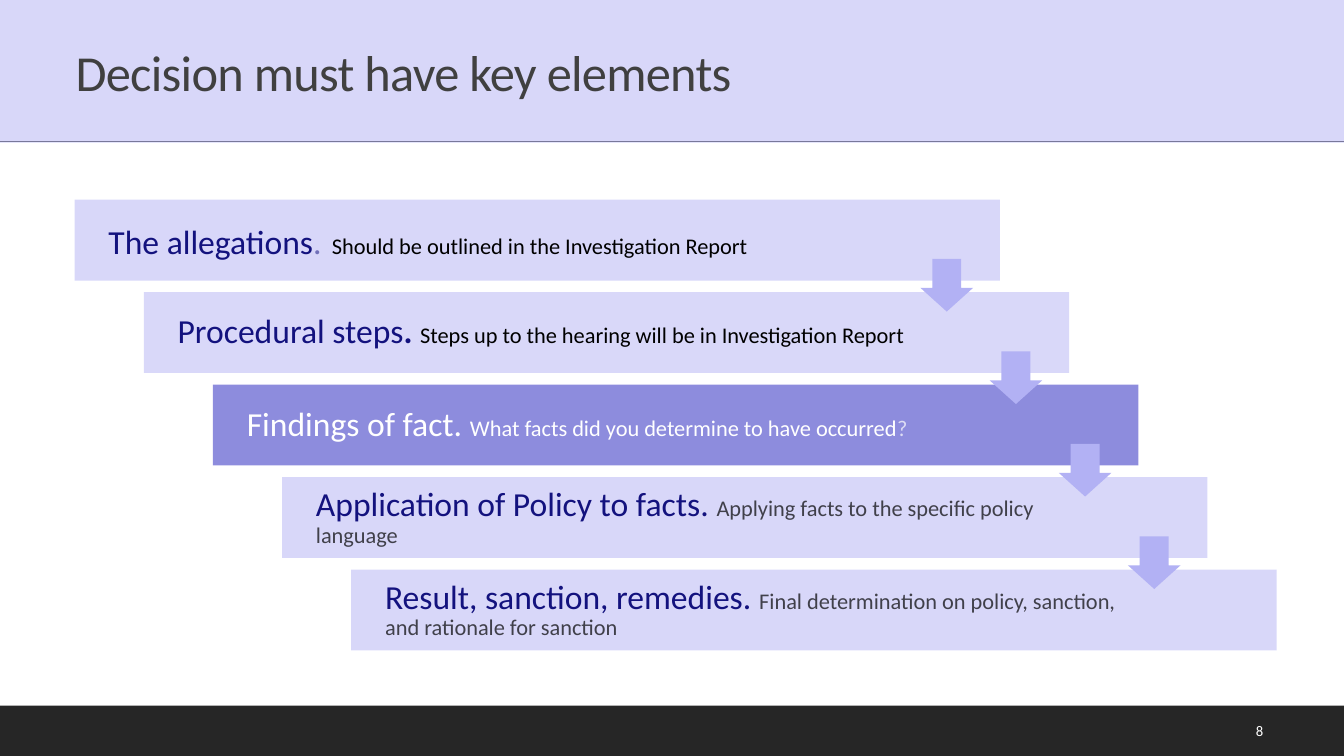
import dataclasses

import lxml.etree
import pptx
import pptx.dml.color
import pptx.enum.shapes
import pptx.enum.text
import pptx.oxml.ns
import pptx.util

Pt = pptx.util.Pt
SHAPES = pptx.enum.shapes.MSO_SHAPE
ALIGN = pptx.enum.text.PP_ALIGN
qn = pptx.oxml.ns.qn


@dataclasses.dataclass(frozen=True)
class Paint:
    colour: str
    opacity: int = 100


@dataclasses.dataclass(frozen=True)
class Theme:
    font = "Calibri"
    white = Paint("FFFFFF")
    black = Paint("000000")
    footer = Paint("262626")
    grey = Paint("404040")
    navy = Paint("13127E")
    violet = Paint("7170B9")
    lilac = Paint("B2B1F4")
    pale = Paint("B2B1F4", 50)
    pale_solid = Paint("D9D8F9")
    strong = Paint("1D1BBD", 50)
    soft_black = Paint("000000", 70)
    soft_white = Paint("FFFFFF", 70)
    title_size = 36
    gap_size = 32
    lead_size = 24
    detail_size = 16
    number_size = 10.5


@dataclasses.dataclass(frozen=True)
class Words:
    text: str
    size: float
    paint: Paint
    bold: bool = False


class SlideBuilder:
    def __init__(self, presentation, theme):
        self.theme = theme
        self.slide = presentation.slides.add_slide(presentation.slide_layouts[5])

    def paint(self, fill, paint):
        fill.solid()
        fill.fore_color.rgb = pptx.dml.color.RGBColor.from_string(paint.colour)
        if paint.opacity < 100:
            colour = fill._xPr.find(qn("a:solidFill"))[0]
            alpha = lxml.etree.SubElement(colour, qn("a:alpha"))
            alpha.set("val", str(paint.opacity * 1000))

    def set_words(self, frame, words, insets, align=ALIGN.LEFT, line_spacing=0.9):
        """Fill a text frame with one paragraph; insets run left, top, right, bottom."""
        frame.word_wrap = True
        frame.auto_size = pptx.enum.text.MSO_AUTO_SIZE.NONE
        frame.vertical_anchor = pptx.enum.text.MSO_ANCHOR.MIDDLE
        (frame.margin_left, frame.margin_top,
         frame.margin_right, frame.margin_bottom) = map(Pt, insets)
        paragraph = frame.paragraphs[0]
        paragraph.alignment = align
        paragraph.line_spacing = line_spacing
        for part in words:
            run = paragraph.add_run()
            run.text = part.text
            run.font.name = self.theme.font
            run.font.size = Pt(part.size)
            run.font.bold = part.bold
            self.paint(run.font.fill, part.paint)
        return paragraph

    def title(self, text, left, top, width, height):
        title = self.slide.shapes.title
        title.left, title.top, title.width, title.height = map(Pt, (left, top, width, height))
        self.paint(title.fill, self.theme.pale)
        words = [Words(text, self.theme.title_size, self.theme.grey)]
        paragraph = self.set_words(title.text_frame, words, (54, 8.64, 7.2, 3.6))
        paragraph.runs[0].font._element.set("spc", "-50")
        # The translucent title band lies over the rule below it.
        self.slide.shapes._spTree.append(title._element)

    def shape(self, kind, left, top, width, height, paint, adjustments=()):
        shape = self.slide.shapes.add_shape(kind, *map(Pt, (left, top, width, height)))
        shape.shadow.inherit = False
        shape.line.fill.background()
        self.paint(shape.fill, paint)
        for index, value in enumerate(adjustments):
            shape.adjustments[index] = value

    def rule(self, left, top, right, paint):
        line = self.slide.shapes.add_connector(
            pptx.enum.shapes.MSO_CONNECTOR.STRAIGHT, Pt(left), Pt(top), Pt(right), Pt(top))
        line.line.width = Pt(1)
        self.paint(line.line.fill, paint)
        lxml.etree.SubElement(line._element.spPr, qn("a:effectLst"))

    def text(self, words, left, top, width, height, insets, **style):
        box = self.slide.shapes.add_textbox(*map(Pt, (left, top, width, height)))
        self.set_words(box.text_frame, words, insets, **style)


def build_steps(theme):
    """Return fill, text width and words for each band of the staircase."""
    def lead(text, paint=theme.navy, bold=False):
        return Words(text, theme.lead_size, paint, bold)

    def detail(text, paint=theme.soft_black):
        return Words(text, theme.detail_size, paint)

    return [
        (theme.pale, 592, [
            lead("The allegations"), lead(".", theme.violet),
            Words(" ", theme.gap_size, theme.violet),
            detail("Should be outlined in the Investigation Report", theme.black)]),
        (theme.pale_solid, 571, [
            lead("Procedural steps"), lead(". ", bold=True),
            detail("Steps up to the hearing will be in Investigation Report", theme.black)]),
        (theme.strong, 571, [
            lead("Findings of fact. ", theme.white),
            detail("What facts did you determine to have occurred", theme.white),
            detail("?", theme.soft_white)]),
        (theme.pale, 571, [
            lead("Application of Policy to facts. "),
            detail("Applying facts to the specific policy language")]),
        (theme.pale, 571, [
            lead("Result, sanction, remedies. "),
            detail("Final determination on policy, sanction, and rationale for sanction")]),
    ]


def main():
    presentation = pptx.Presentation()
    presentation.slide_width, presentation.slide_height = Pt(960), Pt(540)
    theme = Theme()
    builder = SlideBuilder(presentation, theme)

    builder.shape(SHAPES.RECTANGLE, 0, 504, 960, 36, theme.footer)
    builder.rule(0, 101, 960, theme.grey)
    builder.text([Words("8", theme.number_size, theme.white)], 860.4, 507.6, 49, 28.8,
                 (7.2, 3.6, 7.2, 3.6), align=ALIGN.RIGHT, line_spacing=1)
    builder.title("Decision must have key elements", 0, 0, 960, 102)

    step_right, step_down = 49.4, 66.05
    steps = build_steps(theme)
    for index, (paint, text_width, words) in enumerate(steps):
        left, top = 53.3 + index * step_right, 142.6 + index * step_down
        builder.shape(SHAPES.RECTANGLE, left, top, 661, 57.8, paint)
        builder.text(words, left + 1.7, top + 1.7, text_width, 54.7, (22.5, 7.2, 7.2, 7.2))
    for index in range(len(steps) - 1):
        builder.shape(SHAPES.DOWN_ARROW, 657.5 + index * step_right, 185 + index * step_down,
                      37.6, 37.6, theme.lilac, (0.55, 0.45))

    presentation.save("out.pptx")


if __name__ == "__main__":
    main()
